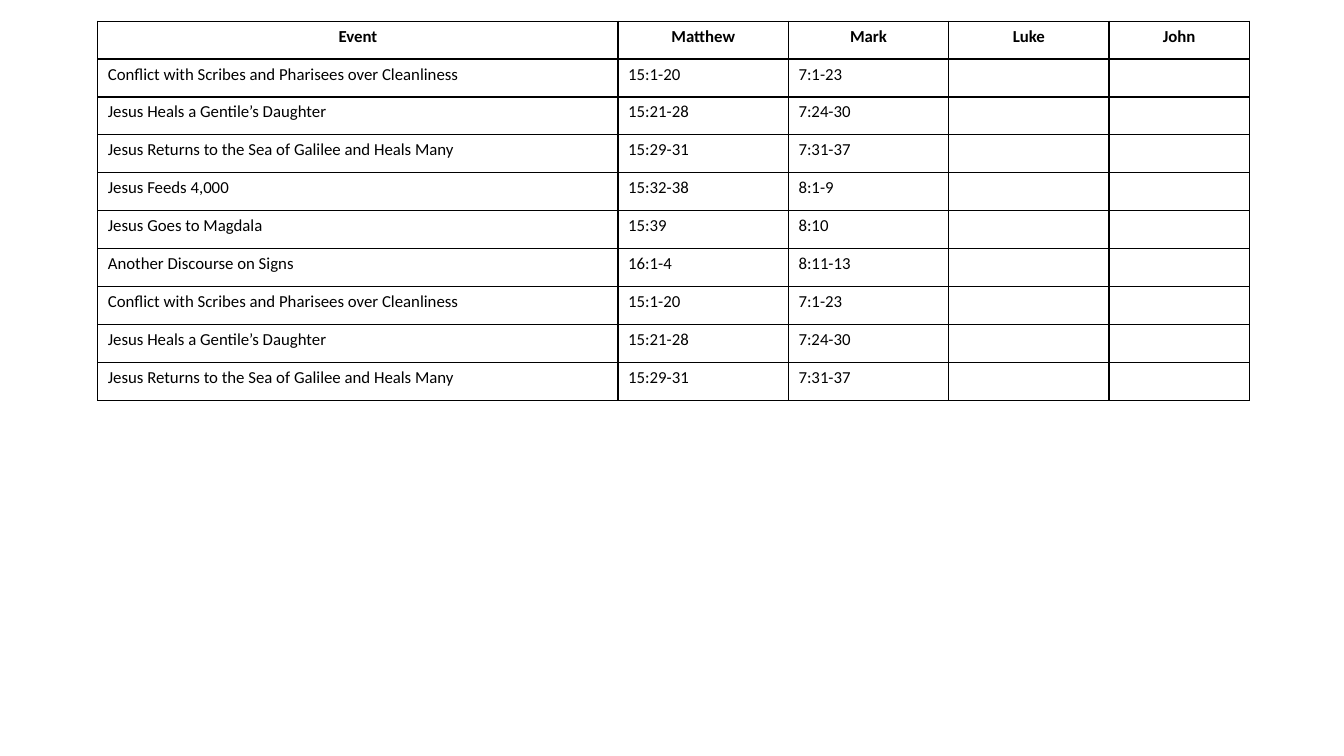
from dataclasses import dataclass

from lxml.etree import SubElement
from pptx import Presentation
from pptx.dml.color import RGBColor
from pptx.enum.text import MSO_ANCHOR, PP_ALIGN as Align
from pptx.oxml.ns import qn
from pptx.slide import Slide
from pptx.table import _Cell as Cell
from pptx.util import Inches, Pt


@dataclass(frozen=True)
class Theme:
    font: str = "Calibri"
    size: Pt = Pt(12)
    border_width: Pt = Pt(1)
    ink: RGBColor = RGBColor(0, 0, 0)
    paper: RGBColor = RGBColor(255, 255, 255)


@dataclass(frozen=True)
class Column:
    heading: str
    width: float


@dataclass(frozen=True)
class Event:
    name: str
    matthew: str = ""
    mark: str = ""
    luke: str = ""
    john: str = ""

    def texts(self) -> tuple[str, ...]:
        return self.name, self.matthew, self.mark, self.luke, self.john


THEME = Theme()
LEFT, TOP, HEIGHT = 0.97, 0.21, 3.76

COLUMNS = [
    Column("Event", 5.16),
    Column("Matthew", 1.69),
    Column("Mark", 1.59),
    Column("Luke", 1.59),
    Column("John", 1.39),
]

EVENTS = [
    Event("Conflict with Scribes and Pharisees over Cleanliness", "15:1-20", "7:1-23"),
    Event("Jesus Heals a Gentile’s Daughter", "15:21-28", "7:24-30"),
    Event("Jesus Returns to the Sea of Galilee and Heals Many", "15:29-31", "7:31-37"),
    Event("Jesus Feeds 4,000", "15:32-38", "8:1-9"),
    Event("Jesus Goes to Magdala", "15:39", "8:10"),
    Event("Another Discourse on Signs", "16:1-4", "8:11-13"),
]
LISTED_EVENTS = EVENTS + EVENTS[:3]  # the table closes by repeating its first three events


def add_borders(cell: Cell) -> None:
    properties = cell._tc.get_or_add_tcPr()
    for side in ("a:lnL", "a:lnR", "a:lnT", "a:lnB"):
        line = SubElement(properties, qn(side), w=str(THEME.border_width))
        fill = SubElement(line, qn("a:solidFill"))
        SubElement(fill, qn("a:srgbClr"), val=str(THEME.ink))


def fill_cell(cell: Cell, text: str, is_heading: bool) -> None:
    add_borders(cell)
    cell.fill.solid()
    cell.fill.fore_color.rgb = THEME.paper
    cell.vertical_anchor = MSO_ANCHOR.TOP

    paragraph = cell.text_frame.paragraphs[0]
    paragraph.alignment = Align.CENTER if is_heading else Align.LEFT
    if not text:
        # Without a size here, the default 18 pt would stretch the row.
        SubElement(paragraph._p, qn("a:endParaRPr"), sz=str(int(THEME.size.pt * 100)))
        return
    run = paragraph.add_run()
    run.text = text
    font_format = {"name": THEME.font, "size": THEME.size, "bold": is_heading}
    for attribute, value in font_format.items():
        setattr(run.font, attribute, value)
    run.font.color.rgb = THEME.ink


def add_events_table(slide: Slide) -> None:
    rows = [tuple(column.heading for column in COLUMNS)]
    rows += [event.texts() for event in LISTED_EVENTS]
    width = sum(column.width for column in COLUMNS)
    table = slide.shapes.add_table(
        len(rows), len(COLUMNS), Inches(LEFT), Inches(TOP), Inches(width), Inches(HEIGHT)
    ).table
    table.horz_banding = False
    for table_column, column in zip(table.columns, COLUMNS):
        table_column.width = Inches(column.width)
    for row_index, texts in enumerate(rows):
        for column_index, text in enumerate(texts):
            fill_cell(table.cell(row_index, column_index), text, row_index == 0)


def main() -> None:
    presentation = Presentation()
    presentation.slide_width = Inches(13.33)
    presentation.slide_height = Inches(7.5)
    add_events_table(presentation.slides.add_slide(presentation.slide_layouts[6]))
    presentation.save("out.pptx")


if __name__ == "__main__":
    main()
